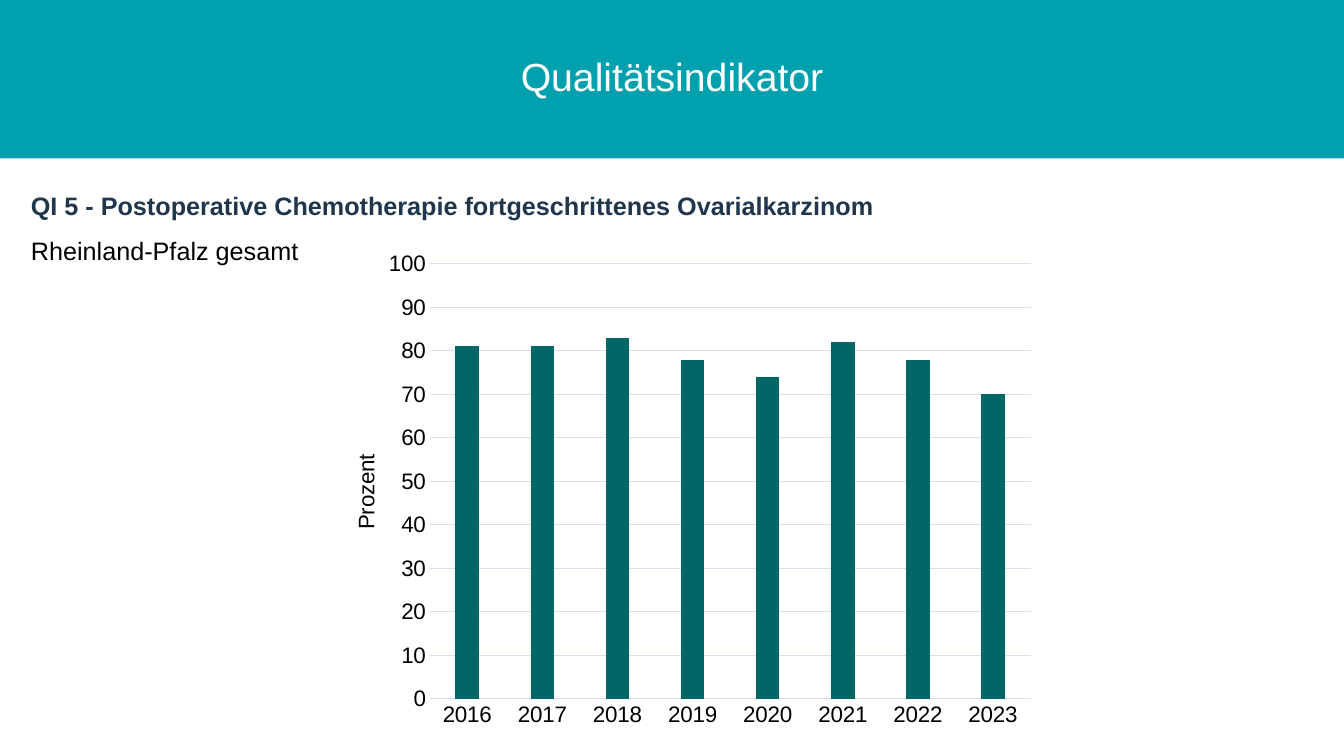
from lxml.etree import SubElement
from pptx import Presentation
from pptx.chart.data import CategoryChartData
from pptx.dml.color import RGBColor
from pptx.enum.chart import XL_CHART_TYPE, XL_TICK_MARK
from pptx.enum.shapes import MSO_SHAPE
from pptx.enum.text import MSO_ANCHOR, PP_ALIGN
from pptx.oxml.ns import qn
from pptx.util import Cm, Pt


def style_font(font, size, color, bold=False):
    font.name = "Arial"
    font.size = Pt(size)
    font.bold = bold
    font.color.rgb = RGBColor.from_string(color)


def place(element, position, **fractions):
    """Give a chart part a manual layout, in fractions of the chart area."""
    for old in element.findall(qn("c:layout")):
        element.remove(old)
    layout = SubElement(element, qn("c:layout"))
    element.insert(position, layout)
    manual = SubElement(layout, qn("c:manualLayout"))
    if "w" in fractions:
        SubElement(manual, qn("c:layoutTarget")).set("val", "inner")
    for mode in ("xMode", "yMode"):
        SubElement(manual, qn(f"c:{mode}")).set("val", "edge")
    for key, value in fractions.items():
        SubElement(manual, qn(f"c:{key}")).set("val", str(value))


deck = Presentation()
deck.slide_width, deck.slide_height = Cm(33.87), Cm(19.05)
page = deck.slides.add_slide(deck.slide_layouts[6])

# Title band
band = page.shapes.add_shape(MSO_SHAPE.RECTANGLE, 0, 0, deck.slide_width, Cm(3.99))
band.shadow.inherit = False
band.fill.solid()
band.fill.fore_color.rgb = RGBColor.from_string("00A1AF")
band.line.fill.background()
band.text_frame.vertical_anchor = MSO_ANCHOR.MIDDLE
para = band.text_frame.paragraphs[0]
para.alignment = PP_ALIGN.CENTER
para.line_spacing = 0.9
span = para.add_run()
span.text = "Qualitätsindikator"
style_font(span.font, 28, "FFFFFF")

# Indicator name and region
box = page.shapes.add_textbox(Cm(0.53), Cm(4.29), Cm(25.3), Cm(2.41))
box.text_frame.word_wrap = True
headings = [
    ("QI 5 - Postoperative Chemotherapie fortgeschrittenes Ovarialkarzinom", "20364C", True),
    ("Rheinland-Pfalz gesamt", "000000", False),
]
for index, (text, color, bold) in enumerate(headings):
    para = box.text_frame.add_paragraph() if index else box.text_frame.paragraphs[0]
    para.line_spacing = 1.5
    span = para.add_run()
    span.text = text
    style_font(span.font, 18, color, bold)

# Yearly rates
data = CategoryChartData()
data.categories = [str(year) for year in range(2016, 2024)]
data.add_series("Series 1", [81, 81, 83, 78, 74, 82, 78, 70])
chart = page.shapes.add_chart(
    XL_CHART_TYPE.COLUMN_CLUSTERED, Cm(8.03), Cm(6.1), Cm(18.31), Cm(12.47), data
).chart
chart.has_legend = False
chart.has_title = False
style_font(chart.font, 16, "000000")

plot = chart.plots[0]
plot.gap_width = 219
plot.overlap = -27
plot.vary_by_categories = False
columns = plot.series[0].format.fill
columns.solid()
columns.fore_color.rgb = RGBColor.from_string("006666")

years, percent = chart.category_axis, chart.value_axis
for axis in (years, percent):
    axis.major_tick_mark = axis.minor_tick_mark = XL_TICK_MARK.NONE
    style_font(axis.tick_labels.font, 16, "000000")
percent.minimum_scale, percent.maximum_scale, percent.major_unit = 0, 100, 10
percent.has_major_gridlines = True
percent.format.line.fill.background()
for line in (years.format.line, percent.major_gridlines.format.line):
    line.color.rgb = RGBColor.from_string("D5E1ED")
    line.width = Pt(0.75)

title_frame = percent.axis_title.text_frame
title_frame._txBody.bodyPr.set("rot", "-5400000")
title_frame._txBody.bodyPr.set("vert", "horz")
span = title_frame.paragraphs[0].add_run()
span.text = "Prozent"
style_font(span.font, 16, "000000")

place(percent.axis_title._element, 1, x=0.04, y=0.42)
place(chart._chartSpace.chart.plotArea, 0, x=0.153, y=0.044, w=0.827, h=0.879)

deck.save("out.pptx")
